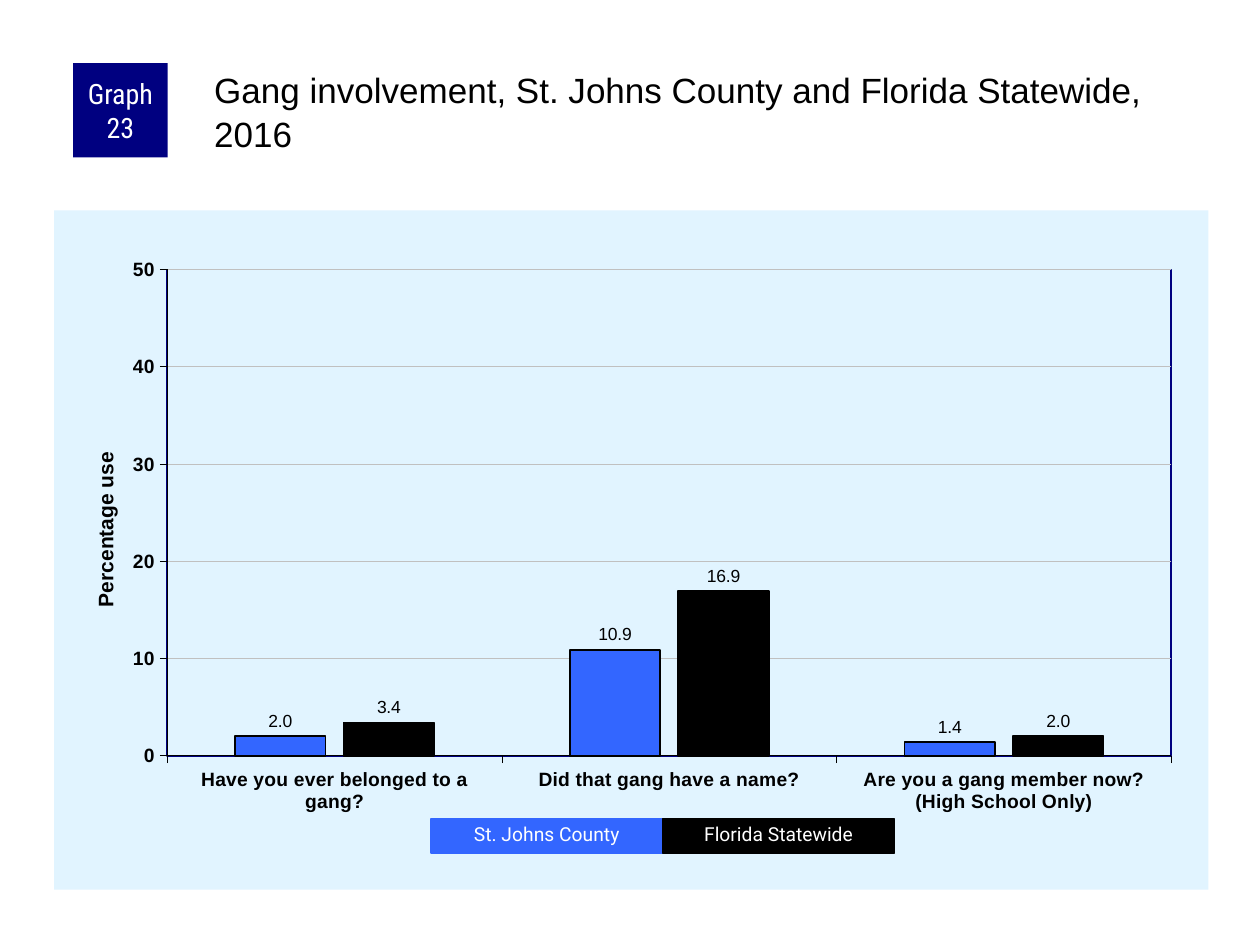
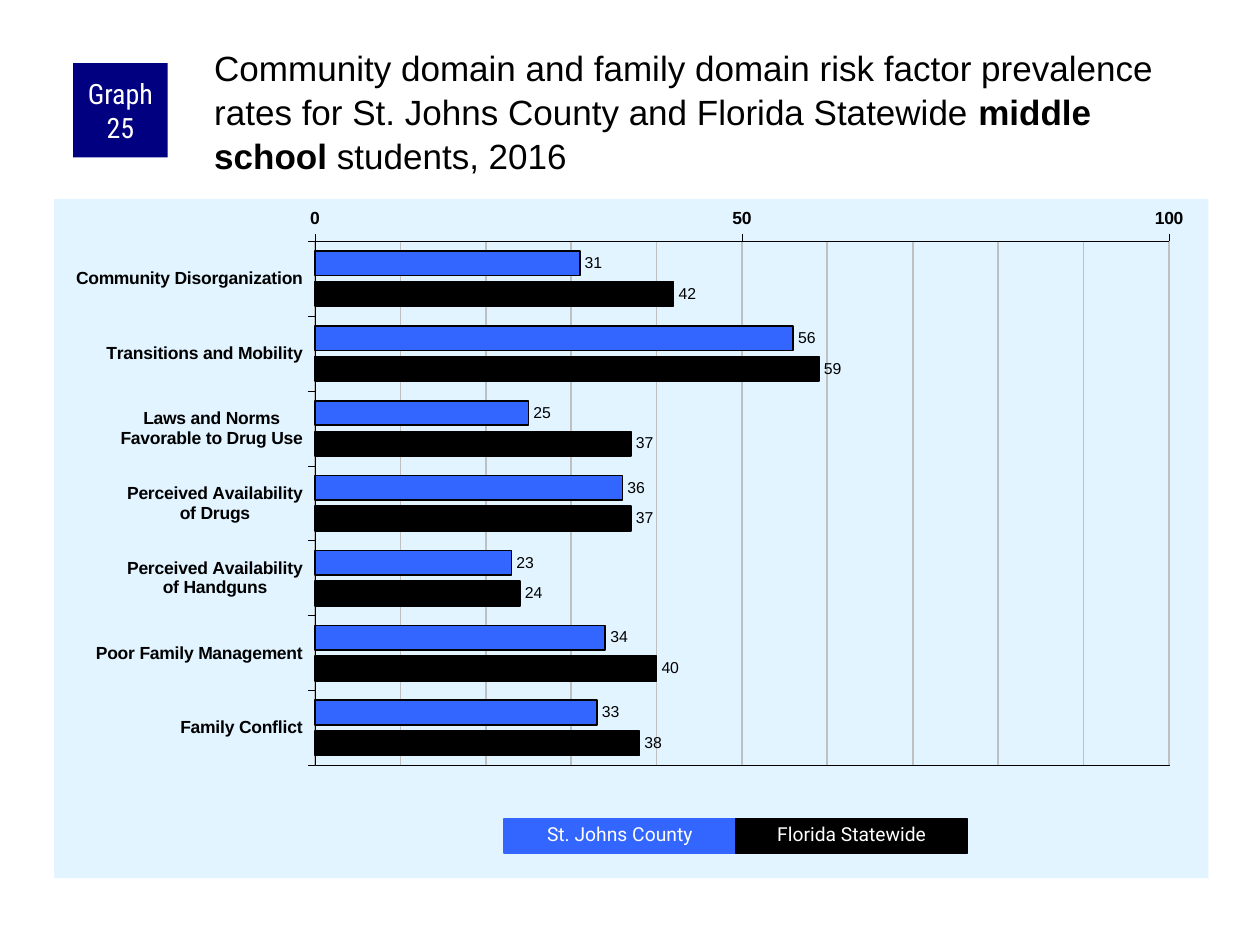
from copy import deepcopy

from pptx import Presentation
from pptx.chart.data import CategoryChartData
from pptx.dml.color import RGBColor
from pptx.enum.chart import XL_AXIS_CROSSES, XL_CHART_TYPE, XL_LABEL_POSITION, XL_TICK_MARK
from pptx.enum.shapes import MSO_SHAPE
from pptx.enum.text import MSO_ANCHOR, PP_ALIGN
from pptx.oxml import parse_xml
from pptx.oxml.ns import nsdecls
from pptx.util import Inches, Pt

COLORS = {
    "county": "3366FF",
    "state": "000000",
    "badge": "000080",
    "panel": "E1F4FF",
    "grid": "C0C0C0",
    "ink": "000000",
    "paper": "FFFFFF",
}
REGIONS = {"county": "St. Johns County", "state": "Florida Statewide"}
LEGEND_WIDTH = 1.84


def rgb(name):
    """Return the named palette colour."""
    return RGBColor.from_string(COLORS[name])


def set_font(font, size, color="ink", face="Arial", bold=False):
    """Apply size, colour, face and weight to a font."""
    font.size, font.name, font.bold = Pt(size), face, bold
    font.color.rgb = rgb(color)


def set_line(line, color, width):
    """Apply a solid colour and a width in points to a line."""
    line.color.rgb = rgb(color)
    line.width = Pt(width)


def add_block(slide, text, box, fill, size, face):
    """Add a filled rectangle with centred white text."""
    block = slide.shapes.add_shape(MSO_SHAPE.RECTANGLE, *map(Inches, box))
    block.shadow.inherit = False
    block.fill.solid()
    block.fill.fore_color.rgb = rgb(fill)
    block.line.fill.background()
    block.text_frame.word_wrap = True
    paragraph = block.text_frame.paragraphs[0]
    paragraph.text = text
    paragraph.alignment = PP_ALIGN.CENTER
    set_font(paragraph.font, size, "paper", face)
    return block


def add_badge(slide, number):
    """Add the square that carries the graph number."""
    badge = add_block(slide, f"Graph {number}", (0.58, 0.5, 0.75, 0.75), "badge", 16, "Roboto Condensed")
    frame = badge.text_frame
    frame.vertical_anchor = MSO_ANCHOR.MIDDLE
    frame.margin_left = frame.margin_right = Inches(0.05)
    frame.margin_top = frame.margin_bottom = 0


def add_title(slide, top, parts):
    """Add the graph title, with every second part in bold."""
    frame = slide.shapes.add_textbox(Inches(1.67), Inches(top), Inches(7.92), Inches(0.83)).text_frame
    frame.word_wrap = True
    frame.margin_left = frame.margin_top = Inches(0.03)
    frame.margin_right = frame.margin_bottom = 0
    paragraph = frame.paragraphs[0]
    paragraph.line_spacing = 1.04
    set_font(paragraph.font, 20)
    for index, part in enumerate(parts):
        run = paragraph.add_run()
        run.text = part
        set_font(run.font, 20, bold=index % 2 == 1)


def add_legend(slide, left):
    """Add one adjoining block per region."""
    for index, (key, label) in enumerate(REGIONS.items()):
        box = (left + index * LEGEND_WIDTH, 6.5, LEGEND_WIDTH, 0.27)
        entry = add_block(slide, label, box, key, 11, "Roboto")
        set_line(entry.line, key, 0.75)
        entry.text_frame.vertical_anchor = MSO_ANCHOR.TOP
        entry.text_frame.paragraphs[0].line_spacing = 0.9


def manual_layout(target="", **places):
    """Return a chart layout with the given edge fractions."""
    inner = f'<c:layoutTarget val="{target}"/>' if target else ""
    modes = '<c:xMode val="edge"/><c:yMode val="edge"/>'
    values = "".join(f'<c:{key} val="{value}"/>' for key, value in places.items())
    return parse_xml(
        f'<c:layout {nsdecls("c")}><c:manualLayout>{inner}{modes}{values}</c:manualLayout></c:layout>'
    )


def area_properties(fill="<a:noFill/>", line="<a:noFill/>", width=0):
    """Return the fill and outline of a chart area."""
    return parse_xml(
        f'<c:spPr {nsdecls("c", "a")}>{fill}<a:ln w="{Pt(width)}">{line}</a:ln></c:spPr>'
    )


def solid(name):
    """Return the markup of a solid palette fill."""
    return f'<a:solidFill><a:srgbClr val="{COLORS[name]}"/></a:solidFill>'


def style_areas(chart, plot_box, border, border_width):
    """Colour the chart panel, then place and outline its plot."""
    chart_element = chart._chartSpace.chart
    chart_element.addnext(area_properties(solid("panel")))
    plot_area = chart_element.plotArea
    for layout in plot_area.findall("{*}layout"):
        plot_area.remove(layout)
    plot_area.insert(0, manual_layout("inner", **dict(zip("xywh", plot_box))))
    plot_area.append(area_properties(line=solid(border), width=border_width))


def style_axes(chart, size, maximum, step, grid_width):
    """Style both axes and scale the value axis from zero."""
    for axis in (chart.category_axis, chart.value_axis):
        axis.major_tick_mark = XL_TICK_MARK.OUTSIDE
        axis.minor_tick_mark = XL_TICK_MARK.NONE
        set_font(axis.tick_labels.font, size, bold=True)
        set_line(axis.format.line, "ink", 0.25)
    values = chart.value_axis
    values.minimum_scale, values.maximum_scale, values.major_unit = 0, maximum, step
    values.has_major_gridlines = True
    set_line(values.major_gridlines.format.line, "grid", grid_width)


def add_minor_grid(axis, step):
    """Add minor gridlines that look like the major ones."""
    axis.minor_unit = step
    axis.has_minor_gridlines = True
    major_style = axis._element.find("{*}majorGridlines/{*}spPr")
    axis._element.find("{*}minorGridlines").append(deepcopy(major_style))


def add_rates_chart(slide, kind, top, rates, gap, overlap, label_size, number_format):
    """Add a two-region chart of rates keyed by category."""
    data = CategoryChartData(number_format=number_format)
    data.categories = list(rates)
    for label, values in zip(REGIONS.values(), zip(*rates.values())):
        data.add_series(label, values)
    frame = slide.shapes.add_chart(kind, Inches(0.43), Inches(top), Inches(9.16), Inches(5.39), data)
    chart = frame.chart
    chart.has_legend = chart.has_title = False
    set_font(chart.font, 11.5)
    plot = chart.plots[0]
    plot.vary_by_categories = False
    plot.gap_width, plot.overlap = gap, overlap
    for key, series in zip(REGIONS, plot.series):
        series.invert_if_negative = False
        series.format.fill.solid()
        series.format.fill.fore_color.rgb = rgb(key)
        set_line(series.format.line, "ink", 1)
        labels = series.data_labels
        labels.show_value = True
        labels.position = XL_LABEL_POSITION.OUTSIDE_END
        labels.number_format, labels.number_format_is_linked = number_format, False
        set_font(labels.font, label_size)
    return chart


def add_value_title(chart, text, left, top):
    """Add a bold title beside the value axis."""
    title = chart.value_axis.axis_title
    paragraph = title.text_frame.paragraphs[0]
    paragraph.text = text
    set_font(paragraph.font, 12, bold=True)
    title.text_frame._txBody.bodyPr.set("rot", "-5400000")
    title.text_frame._txBody.bodyPr.set("vert", "horz")
    element = title._element
    for layout in element.findall("{*}layout"):
        element.remove(layout)
    element.find("{*}tx").addnext(manual_layout(x=left, y=top))


def build_gang_slide(slide):
    """Build the gang involvement graph."""
    rates = {
        "Have you ever belonged to a gang?": (2.0, 3.4),
        "Did that gang have a name?": (10.9, 16.9),
        "Are you a gang member now?\n(High School Only)": (1.4, 2.0),
    }
    chart = add_rates_chart(slide, XL_CHART_TYPE.COLUMN_CLUSTERED, 1.67, rates, 150, -20, 10, "0.0")
    style_axes(chart, 11, 50, 10, 0.25)
    chart.value_axis.tick_labels.number_format = "0"
    chart.value_axis.tick_labels.number_format_is_linked = False
    add_value_title(chart, "Percentage use", 0.03, 0.35)
    style_areas(chart, (0.098, 0.087, 0.87, 0.716), "badge", 1)
    add_badge(slide, 23)
    add_title(slide, 0.5, ["Gang involvement, St. Johns County and Florida Statewide, 2016"])
    add_legend(slide, 3.42)


def build_risk_slide(slide):
    """Build the community and family risk factor graph."""
    rates = {
        "Community Disorganization": (31, 42),
        "Transitions and Mobility": (56, 59),
        "Laws and Norms\nFavorable to Drug Use": (25, 37),
        "Perceived Availability\nof Drugs": (36, 37),
        "Perceived Availability\nof Handguns": (23, 24),
        "Poor Family Management": (34, 40),
        "Family Conflict": (33, 38),
    }
    chart = add_rates_chart(slide, XL_CHART_TYPE.BAR_CLUSTERED, 1.58, rates, 80, -25, 9, "0")
    style_axes(chart, 10, 100, 50, 1)
    chart.category_axis.reverse_order = True
    chart.category_axis.crosses = XL_AXIS_CROSSES.MAXIMUM
    add_minor_grid(chart.value_axis, 10)
    style_areas(chart, (0.226, 0.062, 0.74, 0.772), "ink", 0.25)
    add_badge(slide, 25)
    add_title(slide, 0.33, [
        "Community domain and family domain risk factor prevalence rates "
        "for St. Johns County and Florida Statewide ",
        "middle school",
        " students, 2016",
    ])
    add_legend(slide, 4)


def main():
    """Build and save both graph slides."""
    deck = Presentation()
    deck.slide_width, deck.slide_height = Inches(10), Inches(7.5)
    for build in (build_gang_slide, build_risk_slide):
        build(deck.slides.add_slide(deck.slide_layouts[6]))
    deck.save("out.pptx")


if __name__ == "__main__":
    main()
